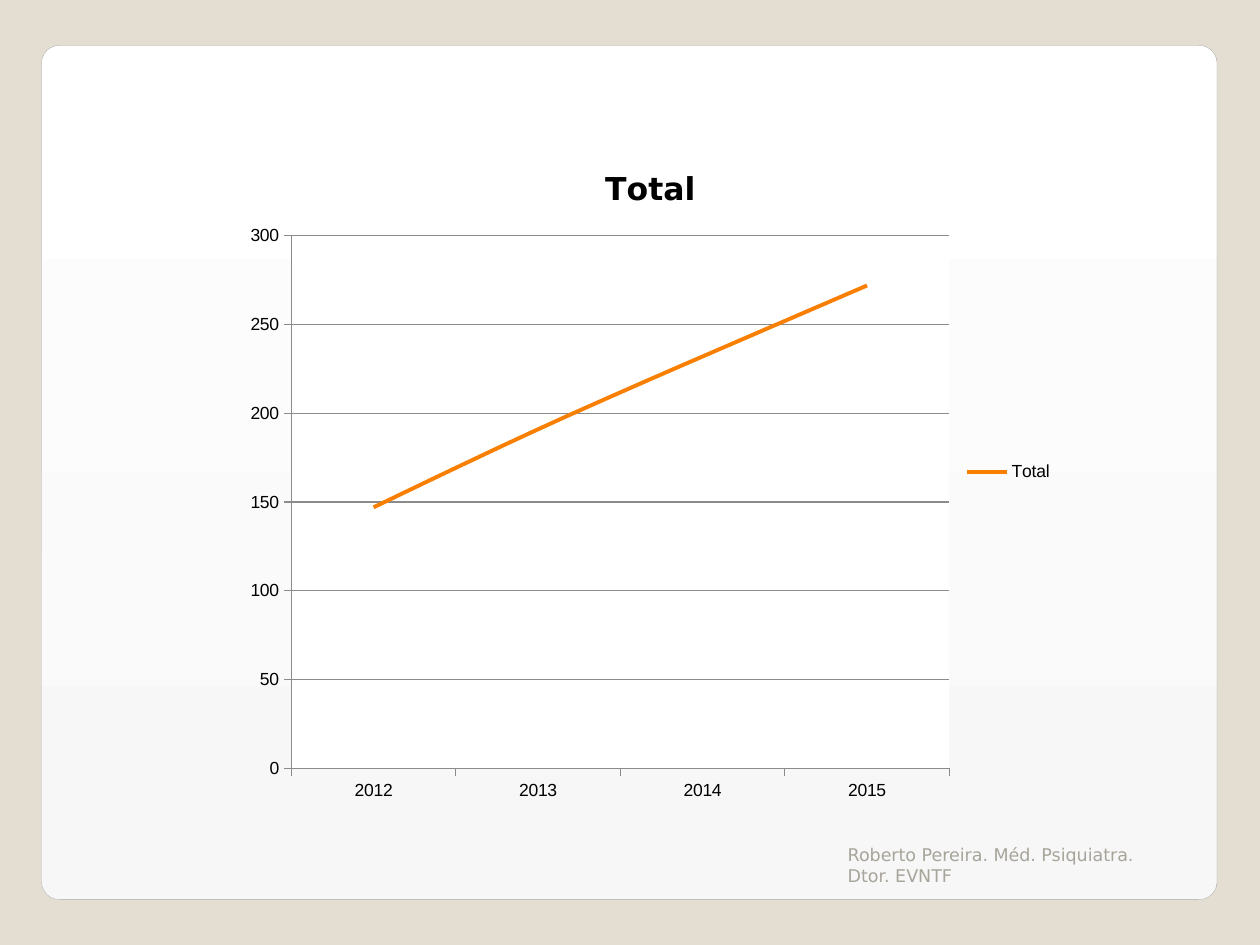
from pptx import Presentation
from pptx.chart.data import CategoryChartData
from pptx.dml.color import RGBColor
from pptx.enum.chart import XL_CHART_TYPE as ChartType, XL_LEGEND_POSITION as LegendPos, XL_TICK_MARK as Tick
from pptx.enum.shapes import MSO_SHAPE as Shape
from pptx.enum.text import MSO_ANCHOR as Anchor
from pptx.oxml import parse_xml
from pptx.oxml.ns import nsdecls, qn
from pptx.util import Inches, Pt


def rgb(hex_color):
    return RGBColor.from_string(hex_color)


def place(element, index, target="", **fractions):
    """Give a chart element a manual layout in fractions of the chart area."""
    for old in element.findall(qn("c:layout")):
        element.remove(old)
    modes = '<c:xMode val="edge"/><c:yMode val="edge"/>'
    sizes = "".join(f'<c:{k} val="{v}"/>' for k, v in fractions.items())
    element.insert(index, parse_xml(
        f'<c:layout {nsdecls("c")}><c:manualLayout>{target}{modes}{sizes}'
        '</c:manualLayout></c:layout>'))


prs = Presentation()
prs.slide_width, prs.slide_height = Inches(10), Inches(7.5)
s = prs.slides.add_slide(prs.slide_layouts[6])
s.background.fill.solid()
s.background.fill.fore_color.rgb = rgb("E3DED1")

# Rounded card
card = s.shapes.add_shape(Shape.ROUNDED_RECTANGLE, Inches(0.33), Inches(0.36),
                          Inches(9.33), Inches(6.78))
card.adjustments[0] = 0.021
card.shadow.inherit = False
card.fill.gradient()
card.fill.gradient_angle = 270
for stop, color in zip(card.fill.gradient_stops, ("FFFFFF", "F7F7F7")):
    stop.color.rgb = rgb(color)
card.line.color.rgb = rgb("A4A4A3")
card.line.width = Pt(0.17)

# Line chart
data = CategoryChartData()
data.categories = ["2012", "2013", "2014", "2015"]
data.add_series("Total", (147, 191, 232, 272))
chart = s.shapes.add_chart(ChartType.LINE, Inches(1.85), Inches(1.07),
                           Inches(6.61), Inches(5.35), data).chart
chart.font.size = Pt(10)
chart.font.name = "Arial"
chart.font.color.rgb = rgb("000000")
chart.plots[0].vary_by_categories = False

chart.has_title = True
p = chart.chart_title.text_frame.paragraphs[0]
r = p.add_run()
r.text = "Total"
for name, value in {"size": Pt(18), "bold": True, "name": "DejaVu Sans"}.items():
    setattr(r.font, name, value)
r.font.color.rgb = rgb("000000")
title = chart.chart_title._element
title.find(qn("c:overlay")).set("val", "1")
place(title, 1, x=0.44, y=0.04)

chart.has_legend = True
chart.legend.position = LegendPos.RIGHT
chart.legend.include_in_layout = False

value_axis = chart.value_axis
value_axis.has_major_gridlines = True
value_axis.minimum_scale, value_axis.maximum_scale = 0, 300
value_axis.major_unit = 50
for axis in (chart.category_axis, value_axis):
    axis.major_tick_mark = Tick.OUTSIDE
for line in (chart.category_axis.format.line, value_axis.format.line,
             value_axis.major_gridlines.format.line):
    line.color.rgb = rgb("8B8B8B")
    line.width = Pt(0.75)

series = chart.plots[0].series[0]
series.smooth = True
series.format.line.color.rgb = rgb("F97F00")
series.format.line.width = Pt(2.25)

plot_area = chart._chartSpace.chart.plotArea
place(plot_area, 0, '<c:layoutTarget val="inner"/>', x=0.07, y=0.15, w=0.79, h=0.79)
plot_area.append(parse_xml(
    f'<c:spPr {nsdecls("c", "a")}><a:solidFill><a:srgbClr val="FFFFFF"/>'
    '</a:solidFill></c:spPr>'))

# Footer
footer = s.shapes.add_textbox(Inches(6.63), Inches(6.68), Inches(2.5), Inches(0.4))
tf = footer.text_frame
tf.word_wrap = True
tf.vertical_anchor = Anchor.BOTTOM
r = tf.paragraphs[0].add_run()
r.text = "Roberto Pereira. Méd. Psiquiatra. Dtor. EVNTF"
r.font.size = Pt(10)
r.font.name = "DejaVu Sans"
r.font.color.rgb = rgb("A7A49A")

prs.save("out.pptx")
